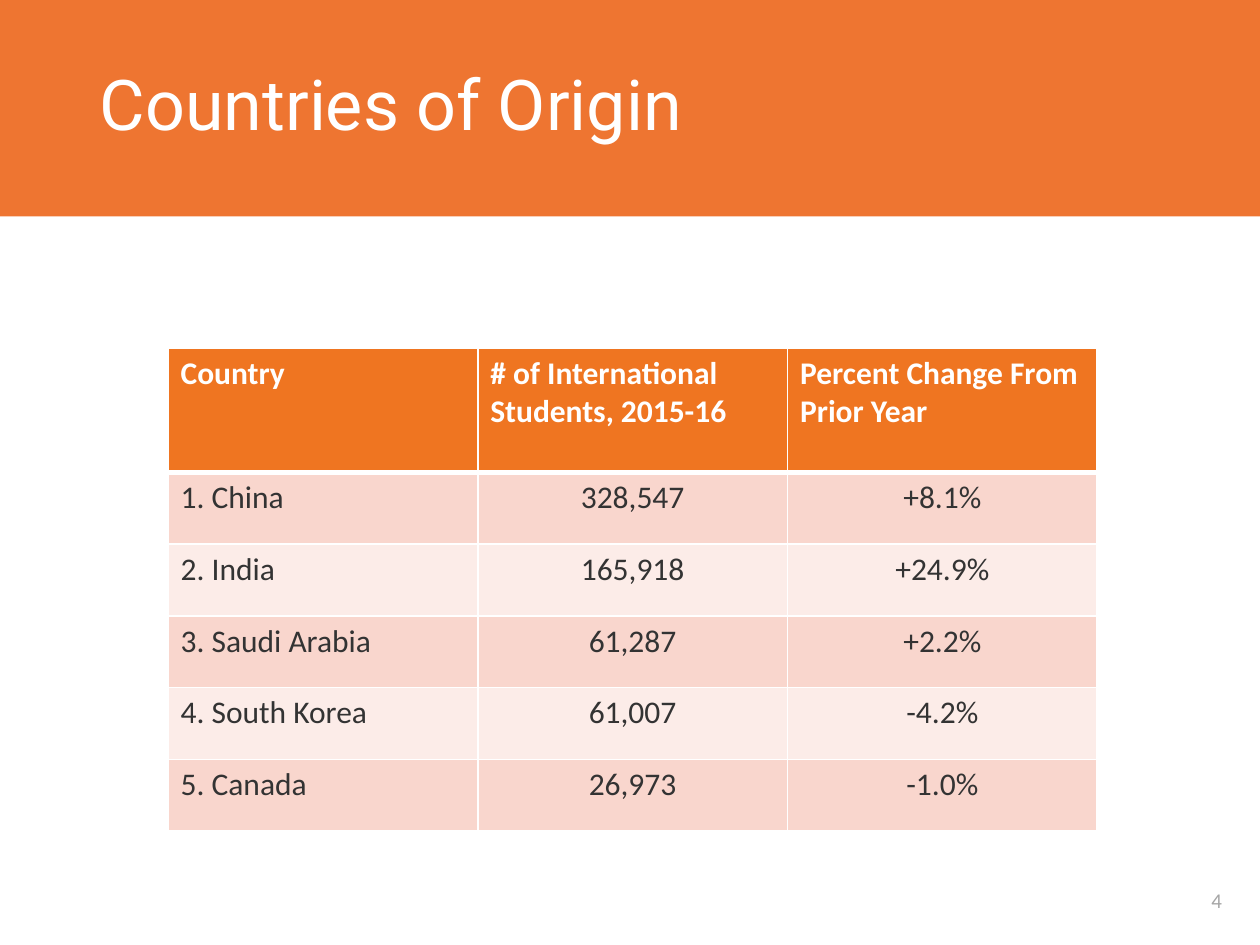
from dataclasses import dataclass

from lxml import etree
from pptx import Presentation
from pptx.dml.color import RGBColor
from pptx.enum.shapes import MSO_SHAPE
from pptx.enum.text import MSO_ANCHOR, PP_ALIGN
from pptx.oxml.ns import qn
from pptx.util import Pt

RECTANGLE = MSO_SHAPE.RECTANGLE
MIDDLE = MSO_ANCHOR.MIDDLE
LEFT, CENTER = PP_ALIGN.LEFT, PP_ALIGN.CENTER


@dataclass(frozen=True)
class Theme:
    banner: str = "EE7531"
    header: str = "EF7521"
    bands: tuple = ("F9D6CD", "FCECE8")
    white: str = "FFFFFF"
    body_text: str = "333333"
    page_text: str = "A6A6A6"
    title_font: str = "Roboto"
    body_font: str = "Calibri"
    title_size: int = 40
    table_size: int = 18
    page_size: int = 12
    rule: int = 1
    header_rule: int = 3


THEME = Theme()

HEADINGS = ("Country", "# of International Students, 2015-16",
            "Percent Change From Prior Year")
COUNTRIES = (
    ("1. China", "328,547", "+8.1%"),
    ("2. India", "165,918", "+24.9%"),
    ("3. Saudi Arabia", "61,287", "+2.2%"),
    ("4. South Korea", "61,007", "-4.2%"),
    ("5. Canada", "26,973", "-1.0%"),
)


def style_text(paragraph, font_name, size, color, align=LEFT, bold=False):
    paragraph.alignment = align
    font = paragraph.runs[0].font
    font.name, font.size, font.bold = font_name, Pt(size), bold
    font.color.rgb = RGBColor.from_string(color)


def add_banner(slide, left, top, width, height):
    banner = slide.shapes.add_shape(
        RECTANGLE, Pt(left), Pt(top), Pt(width), Pt(height))
    banner.shadow.inherit = False
    banner.fill.solid()
    banner.fill.fore_color.rgb = RGBColor.from_string(THEME.banner)
    banner.line.fill.background()


def add_label(slide, text, left, top, width, height):
    """Add a vertically centred text box and return its paragraph."""
    frame = slide.shapes.add_textbox(
        Pt(left), Pt(top), Pt(width), Pt(height)).text_frame
    frame.word_wrap = True
    frame.vertical_anchor = MIDDLE
    frame.text = text
    return frame.paragraphs[0]


def set_borders(cell, top, bottom):
    """Draw white borders; the fill must be set afterwards."""
    properties = cell._tc.get_or_add_tcPr()
    widths = {"a:lnL": THEME.rule, "a:lnR": THEME.rule,
              "a:lnT": top, "a:lnB": bottom}
    for tag, width in widths.items():
        line = etree.SubElement(properties, qn(tag), w=str(Pt(width)))
        fill = etree.SubElement(line, qn("a:solidFill"))
        etree.SubElement(fill, qn("a:srgbClr"), val=THEME.white)


def add_country_table(slide, left, top, column_width, header_height, row_height):
    rows = (HEADINGS, *COUNTRIES)
    table = slide.shapes.add_table(
        len(rows), len(HEADINGS), Pt(left), Pt(top),
        Pt(column_width * len(HEADINGS)),
        Pt(header_height + row_height * len(COUNTRIES))).table
    for column in table.columns:
        column.width = Pt(column_width)
    for r, values in enumerate(rows):
        is_header = r == 0
        table.rows[r].height = Pt(header_height if is_header else row_height)
        background = THEME.header if is_header else THEME.bands[(r - 1) % 2]
        color = THEME.white if is_header else THEME.body_text
        for c, value in enumerate(values):
            cell = table.cell(r, c)
            cell.text = value
            style_text(cell.text_frame.paragraphs[0], THEME.body_font,
                       THEME.table_size, color,
                       LEFT if is_header or c == 0 else CENTER, is_header)
            set_borders(cell,
                        top=THEME.header_rule if r == 1 else THEME.rule,
                        bottom=THEME.header_rule if is_header else THEME.rule)
            cell.fill.solid()
            cell.fill.fore_color.rgb = RGBColor.from_string(background)


def main():
    presentation = Presentation()
    presentation.slide_width, presentation.slide_height = Pt(720), Pt(540)
    slide = presentation.slides.add_slide(presentation.slide_layouts[6])

    add_banner(slide, -0.5, 0, 721, 123.75)
    page_number = add_label(slide, "4", 670.5, 500.5, 49.5, 28)
    style_text(page_number, THEME.body_font, THEME.page_size,
               THEME.page_text, CENTER)
    title = add_label(slide, "Countries of Origin", 50, 0, 620, 123)
    title.line_spacing = 0.9
    style_text(title, THEME.title_font, THEME.title_size, THEME.white)
    add_country_table(slide, left=96, top=199, column_width=177,
                      header_height=71, row_height=41)

    presentation.save("out.pptx")


if __name__ == "__main__":
    main()
